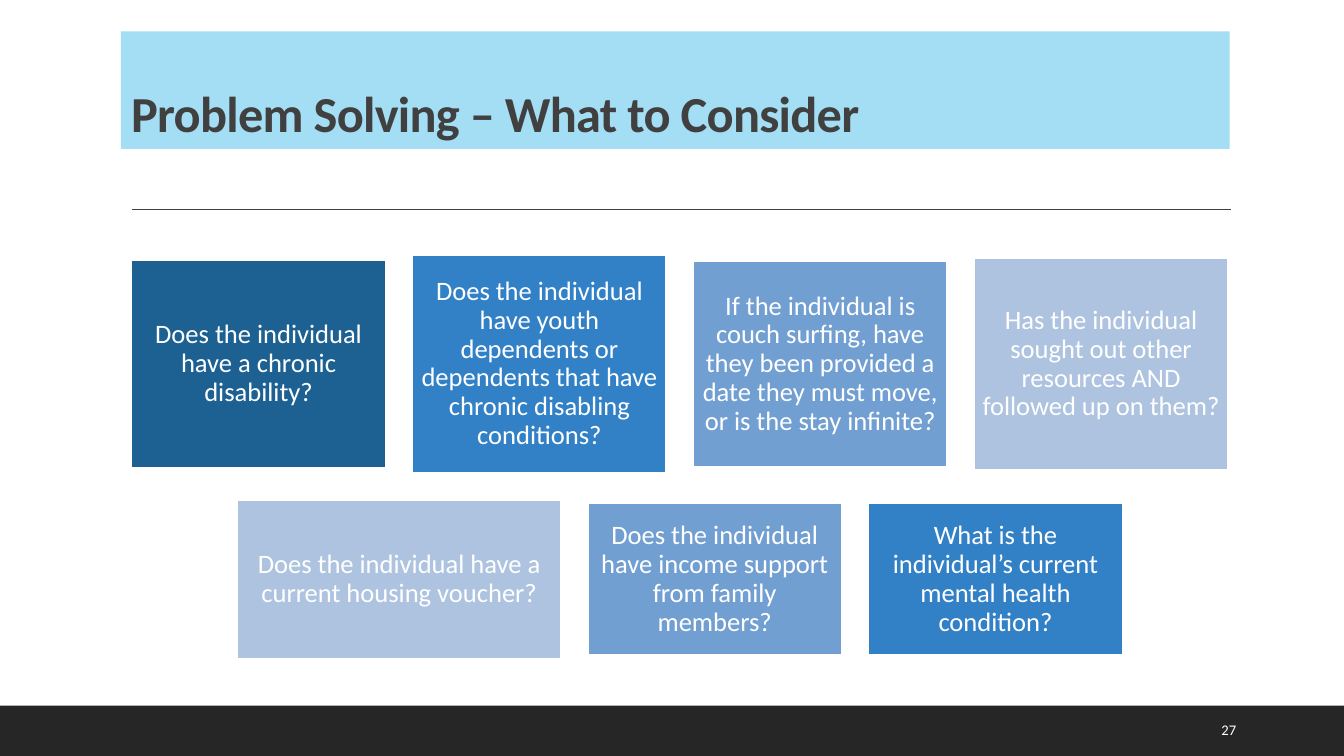
"""Build the slide of problem-solving questions to consider."""
from dataclasses import dataclass

from lxml import etree
from pptx import Presentation
from pptx import util as u
from pptx.dml.color import RGBColor
from pptx.enum import shapes, text
from pptx.oxml import ns

FONT = "Calibri"
WHITE, DARK, FOOTER, BANNER = "FFFFFF", "404040", "262626", "A4DEF4"
NAVY, BLUE, SKY, PALE = "1C6192", "3281C7", "719FD2", "ADC3DF"
SLIDE_W, SLIDE_H = 960, 540
CARD_W, WIDE_W, GAP = 182.2, 231.8, 18.4


@dataclass
class Card:
    question: str
    fill: str
    height: float
    width: float = CARD_W


@dataclass
class Row:
    left: float
    middle: float
    cards: list[Card]


ROWS = [
    Row(93.6, 260, [
        Card("Does the individual have a chronic disability?", NAVY, 149.8),
        Card("Does the individual have youth dependents or dependents that have "
             "chronic disabling conditions?", BLUE, 156.2),
        Card("If the individual is couch surfing, have they been provided a date "
             "they must move, or is the stay infinite?", SKY, 148.3),
        Card("Has the individual sought out other resources AND followed up on them?",
             PALE, 151.9),
    ]),
    Row(169.2, 413.8, [
        Card("Does the individual have a current housing voucher?", PALE, 114.5, WIDE_W),
        Card("Does the individual have income support from family members?", SKY, 109.4),
        Card("What is the individual’s current mental health condition?", BLUE, 109.4),
    ]),
]


def color(value: str) -> RGBColor:
    return RGBColor.from_string(value)


def write(sp, content: str, size: float, hue: str, align, anchor, bold: bool = False):
    tf = sp.text_frame
    tf.text = content
    tf.word_wrap = True
    tf.auto_size = text.MSO_AUTO_SIZE.NONE
    tf.vertical_anchor = anchor
    p = tf.paragraphs[0]
    p.alignment = align
    p.line_spacing = 0.9
    r = p.runs[0]
    r.font.name, r.font.size, r.font.bold = FONT, u.Pt(size), bold
    r.font.color.rgb = color(hue)
    return r


def add_box(slide, left: float, top: float, width: float, height: float, fill: str):
    sp = slide.shapes.add_shape(shapes.MSO_SHAPE.RECTANGLE, u.Pt(left), u.Pt(top),
                                u.Pt(width), u.Pt(height))
    sp.shadow.inherit = False
    sp.fill.solid()
    sp.fill.fore_color.rgb = color(fill)
    sp.line.fill.background()
    return sp


def add_title(slide, content: str) -> None:
    sp = slide.shapes.title
    sp.left, sp.top, sp.width, sp.height = u.Pt(86.4), u.Pt(22.4), u.Pt(792), u.Pt(83.9)
    sp.fill.solid()
    sp.fill.fore_color.rgb = color(BANNER)
    r = write(sp, content, 36, DARK, text.PP_ALIGN.LEFT, text.MSO_ANCHOR.BOTTOM, True)
    r.font._element.set("spc", "-50")


def add_rule(slide, left: float, right: float, y: float) -> None:
    line = slide.shapes.add_connector(shapes.MSO_CONNECTOR.STRAIGHT, u.Pt(left), u.Pt(y),
                                      u.Pt(right), u.Pt(y))
    line.line.color.rgb = color(DARK)
    line.line.width = u.Pt(1)
    etree.SubElement(line._element.spPr, ns.qn("a:effectLst"))


def add_page_number(slide, number: str) -> None:
    sp = slide.shapes.add_textbox(u.Pt(865.4), u.Pt(507.6), u.Pt(61.2), u.Pt(28.8))
    write(sp, number, 10.5, WHITE, text.PP_ALIGN.LEFT, text.MSO_ANCHOR.MIDDLE)


def add_row(slide, row: Row) -> None:
    left = row.left
    for card in row.cards:
        sp = add_box(slide, left, row.middle - card.height / 2, card.width, card.height,
                     card.fill)
        sp.line.color.rgb = color(WHITE)
        sp.line.width = u.Pt(2)
        write(sp, card.question, 19, WHITE, text.PP_ALIGN.CENTER, text.MSO_ANCHOR.MIDDLE)
        tf = sp.text_frame
        tf.margin_left = tf.margin_right = tf.margin_top = tf.margin_bottom = u.Pt(5.7)
        left += card.width + GAP


def main() -> None:
    prs = Presentation()
    prs.slide_width, prs.slide_height = u.Pt(SLIDE_W), u.Pt(SLIDE_H)
    slide = prs.slides.add_slide(prs.slide_layouts[5])
    add_box(slide, 0, 504, SLIDE_W, 36, FOOTER)
    add_rule(slide, 94.3, 879.1, 149.8)
    add_title(slide, "Problem Solving – What to Consider")
    add_page_number(slide, "27")
    for row in ROWS:
        add_row(slide, row)
    prs.save("out.pptx")


if __name__ == "__main__":
    main()
